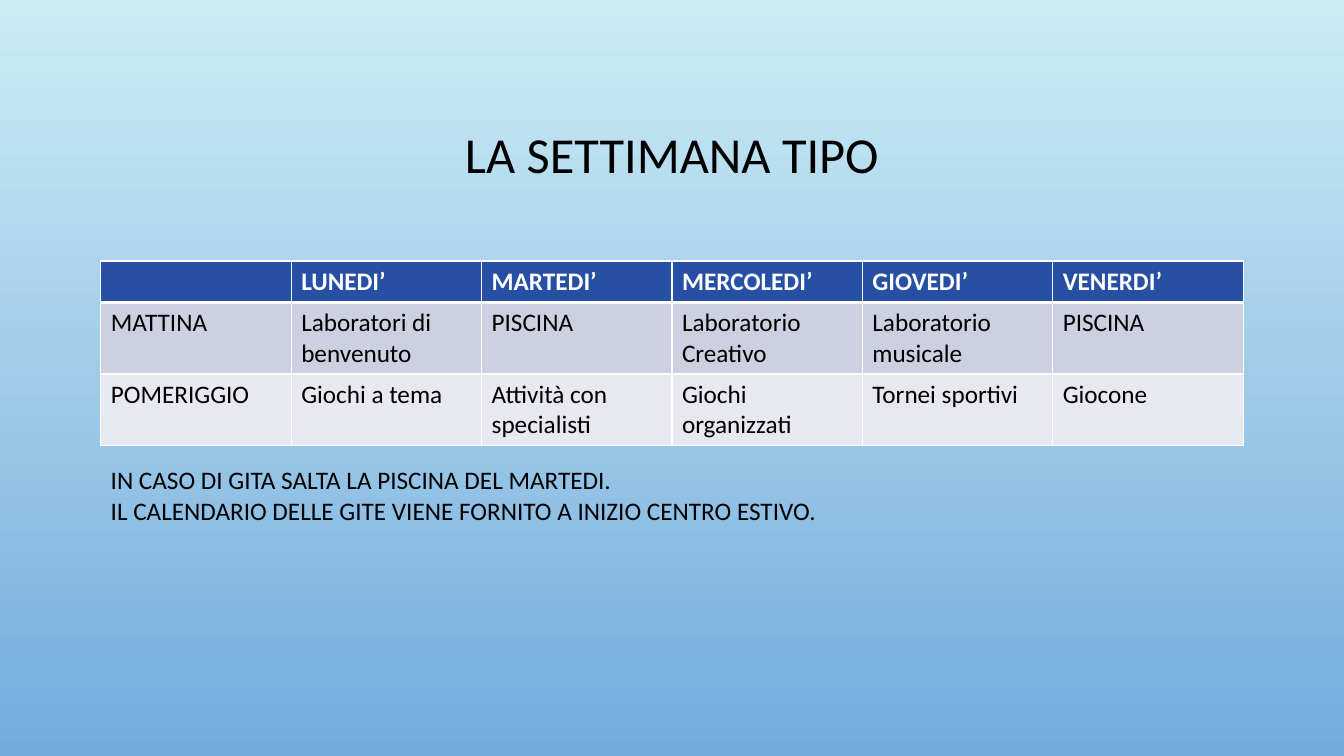
from lxml.etree import SubElement
from pptx import Presentation
from pptx.dml.color import RGBColor
from pptx.enum.text import MSO_ANCHOR as Anchor, PP_ALIGN as Align
from pptx.oxml.ns import qn
from pptx.util import Inches, Pt

FONT = "Calibri"
BLACK, WHITE = "000000", "FFFFFF"
ROW_FILLS = ["274FA4", "CDD0E0", "E8E9F0"]
ROW_HEIGHTS = [0.41, 0.7, 0.7]
WEEK = [
    ["", "LUNEDI’", "MARTEDI’", "MERCOLEDI’", "GIOVEDI’", "VENERDI’"],
    ["MATTINA", "Laboratori di benvenuto", "PISCINA", "Laboratorio Creativo",
     "Laboratorio musicale", "PISCINA"],
    ["POMERIGGIO", "Giochi a tema", "Attività con specialisti",
     "Giochi organizzati", "Tornei sportivi", "Giocone"],
]
NOTES = [
    "IN CASO DI GITA SALTA LA PISCINA DEL MARTEDI.",
    "IL CALENDARIO DELLE GITE VIENE FORNITO A INIZIO CENTRO ESTIVO.",
]


def color(hex_string):
    """Return the colour for a hex string."""
    return RGBColor.from_string(hex_string)


def format_runs(paragraph, size, hex_string=BLACK, bold=False):
    """Give every run of a paragraph the same look."""
    for run in paragraph.runs:
        run.font.name = FONT
        run.font.size = Pt(size)
        run.font.bold = bold
        run.font.color.rgb = color(hex_string)


def place(shape, left, top, width, height):
    """Move a shape to a box given in inches."""
    shape.left, shape.top = Inches(left), Inches(top)
    shape.width, shape.height = Inches(width), Inches(height)


def set_borders(cell, widths):
    """Draw white cell borders, with a width in points for each side."""
    properties = cell._tc.get_or_add_tcPr()
    for side, width in widths.items():
        line = SubElement(properties, qn(f"a:ln{side}"), w=str(Pt(width)))
        fill = SubElement(line, qn("a:solidFill"))
        SubElement(fill, qn("a:srgbClr"), val=WHITE)


def paint_background(slide, top_color, bottom_color):
    """Fill the slide with a vertical gradient."""
    fill = slide.background.fill
    fill.gradient()
    fill.gradient_angle = 270
    for stop, hex_string in zip(fill.gradient_stops, [top_color, bottom_color]):
        stop.color.rgb = color(hex_string)


def add_title(slide, text, box):
    """Fill and place the title placeholder."""
    title = slide.shapes.title
    place(title, *box)
    title.text_frame.text = text
    title.text_frame.vertical_anchor = Anchor.MIDDLE
    paragraph = title.text_frame.paragraphs[0]
    paragraph.alignment = Align.CENTER
    paragraph.line_spacing = 0.9
    format_runs(paragraph, 36)


def add_timetable(slide, rows, left, top, width):
    """Build the weekly table with equal columns."""
    frame = slide.shapes.add_table(
        len(rows), len(rows[0]), Inches(left), Inches(top),
        Inches(width), Inches(sum(ROW_HEIGHTS)))
    table = frame.table
    for row_index, texts in enumerate(rows):
        header = row_index == 0
        table.rows[row_index].height = Inches(ROW_HEIGHTS[row_index])
        widths = {"L": 1, "R": 1, "T": 3 if row_index == 1 else 1,
                  "B": 3 if header else 1}
        for column_index, text in enumerate(texts):
            cell = table.cell(row_index, column_index)
            cell.text_frame.text = text
            format_runs(cell.text_frame.paragraphs[0], 18,
                        WHITE if header else BLACK, header)
            set_borders(cell, widths)
            cell.fill.solid()
            cell.fill.fore_color.rgb = color(ROW_FILLS[row_index])


def add_notes(slide, lines, box):
    """Write the remarks below the table."""
    text_box = slide.shapes.add_textbox(*map(Inches, box))
    text_box.text_frame.word_wrap = True
    text_box.text_frame.text = "\n".join(lines)
    for paragraph in text_box.text_frame.paragraphs:
        format_runs(paragraph, 18)


def main():
    """Build and save the presentation."""
    presentation = Presentation()
    presentation.slide_width = Inches(13.33)
    presentation.slide_height = Inches(7.5)
    slide = presentation.slides.add_slide(presentation.slide_layouts[5])
    paint_background(slide, "CBECF5", "73ABDD")
    add_title(slide, "LA SETTIMANA TIPO", (1, 0.68, 11.33, 1.75))
    add_timetable(slide, WEEK, 1, 2.59, 11.33)
    add_notes(slide, NOTES, (1, 4.56, 7.46, 0.71))
    presentation.save("out.pptx")


if __name__ == "__main__":
    main()
